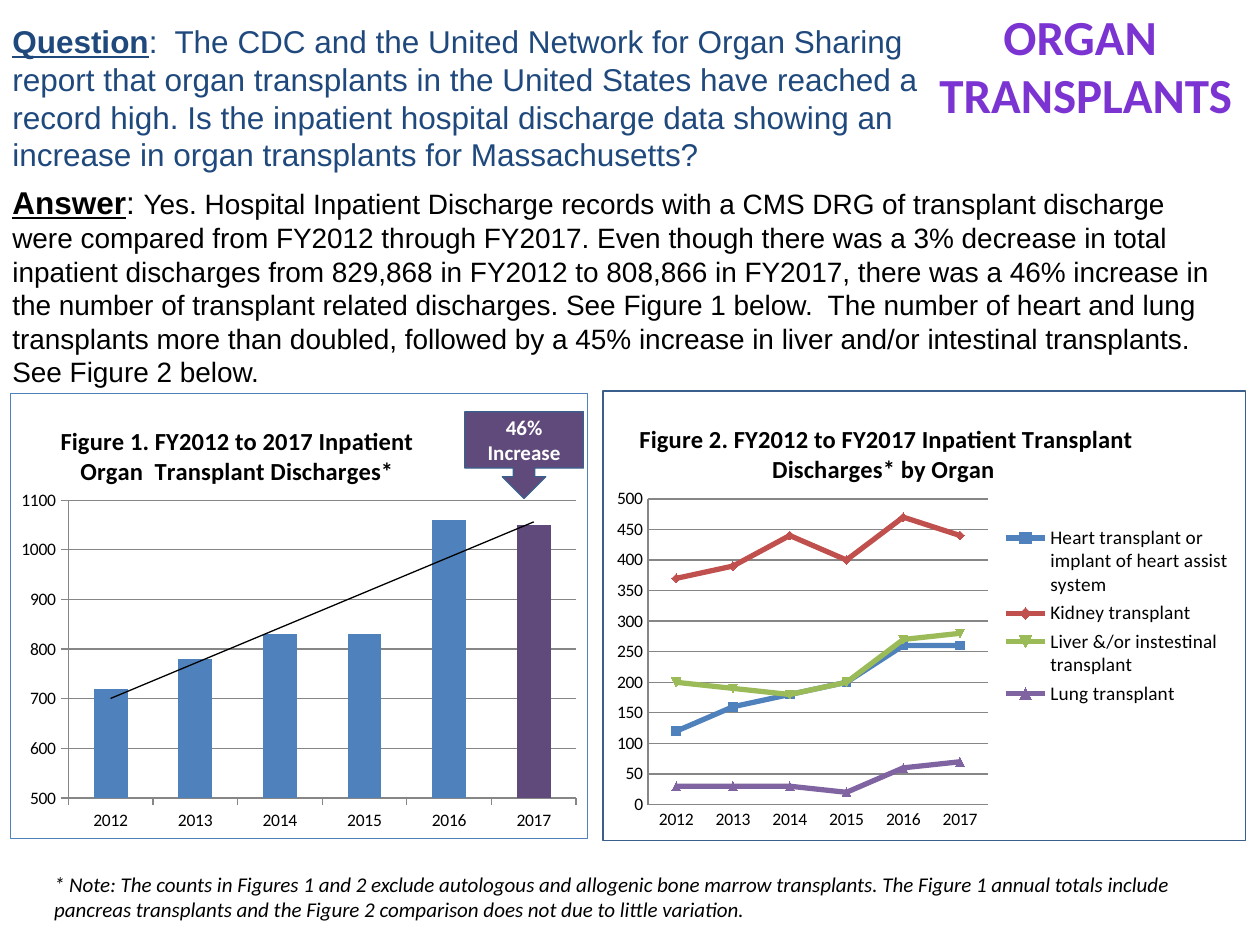
from dataclasses import dataclass
from typing import Optional

from lxml import etree
from pptx import Presentation
from pptx.chart.data import CategoryChartData
from pptx.dml.color import RGBColor
from pptx.enum.chart import XL_CHART_TYPE, XL_LEGEND_POSITION, XL_TICK_MARK
from pptx.enum.shapes import MSO_SHAPE
from pptx.enum.text import MSO_ANCHOR, PP_ALIGN
from pptx.oxml import parse_xml
from pptx.oxml.ns import nsdecls, qn
from pptx.util import Cm, Pt

COLUMN, LINE = XL_CHART_TYPE.COLUMN_CLUSTERED, XL_CHART_TYPE.LINE
LEGEND_RIGHT = XL_LEGEND_POSITION.RIGHT
TICK_NONE, TICK_OUT = XL_TICK_MARK.NONE, XL_TICK_MARK.OUTSIDE
CALLOUT = MSO_SHAPE.DOWN_ARROW_CALLOUT
TOP, MIDDLE = MSO_ANCHOR.TOP, MSO_ANCHOR.MIDDLE
LEFT, CENTER = PP_ALIGN.LEFT, PP_ALIGN.CENTER

COLORS = {
    "black": "000000", "white": "FFFFFF", "navy": "1F497D", "violet": "7B34D2",
    "plum": "604A7B", "outline": "3A5F8C", "grid": "868686",
    "blue": "4F81BD", "red": "C0504D", "green": "9BBB59", "purple": "8064A2",
}
YEARS = ["2012", "2013", "2014", "2015", "2016", "2017"]


@dataclass
class Span:
    text: str
    size: int
    color: str = "black"
    font: str = "Calibri"
    bold: bool = False
    italic: bool = False
    underline: bool = False


@dataclass
class TextBlock:
    place: tuple[float, float, float, float]
    paragraphs: list[list[Span]]
    align: PP_ALIGN = LEFT
    anchor: MSO_ANCHOR = TOP
    wrap: bool = True


@dataclass
class Series:
    name: str
    values: list[int]
    color: str


@dataclass
class Figure:
    place: tuple[float, float, float, float]
    kind: XL_CHART_TYPE
    title: str
    title_spot: tuple[float, float]
    plot: tuple[float, float, float, float]
    series: list[Series]
    scale: tuple[int, int, int]
    tick: XL_TICK_MARK
    border: str
    legend: Optional[tuple[float, float, float, float]] = None


def rgb(name: str) -> RGBColor:
    return RGBColor.from_string(COLORS[name])


def write(frame, block: TextBlock) -> None:
    frame.word_wrap = block.wrap
    frame.vertical_anchor = block.anchor
    for index, spans in enumerate(block.paragraphs):
        para = frame.add_paragraph() if index else frame.paragraphs[0]
        para.alignment = block.align
        for span in spans:
            run = para.add_run()
            run.text = span.text
            font = run.font
            font.name, font.size = span.font, Pt(span.size)
            font.bold, font.italic, font.underline = span.bold, span.italic, span.underline
            font.color.rgb = rgb(span.color)


def add_text(page, block: TextBlock) -> None:
    box = page.shapes.add_textbox(*map(Cm, block.place))
    write(box.text_frame, block)


def add_callout(page, block: TextBlock) -> None:
    callout = page.shapes.add_shape(CALLOUT, *map(Cm, block.place))
    callout.shadow.inherit = False
    callout.fill.solid()
    callout.fill.fore_color.rgb = rgb("plum")
    callout.line.color.rgb = rgb("outline")
    callout.line.width = Pt(0.75)
    write(callout.text_frame, block)


def set_layout(parent, after: str, spot: tuple[float, ...], inner: bool = False) -> None:
    for old in parent.findall(qn("c:layout")):
        parent.remove(old)
    layout = etree.Element(qn("c:layout"))
    manual = etree.SubElement(layout, qn("c:manualLayout"))
    settings = [("layoutTarget", "inner")] if inner else []
    settings += [("xMode", "edge"), ("yMode", "edge")]
    settings += list(zip("xywh", map(str, spot)))
    for tag, value in settings:
        etree.SubElement(manual, qn(f"c:{tag}")).set("val", value)
    anchor = parent.find(qn(after)) if after else None
    if anchor is None:
        parent.insert(0, layout)
    else:
        anchor.addnext(layout)


def line_xml(color: str) -> str:
    return f'<a:ln w="9525"><a:solidFill><a:srgbClr val="{COLORS[color]}"/></a:solidFill></a:ln>'


def add_trend(series) -> None:
    trend = parse_xml(
        f'<c:trendline {nsdecls("c", "a")}><c:spPr>{line_xml("black")}</c:spPr>'
        '<c:trendlineType val="linear"/><c:dispRSqr val="0"/><c:dispEq val="0"/></c:trendline>'
    )
    series._element.find(qn("c:cat")).addprevious(trend)


def style_axes(chart, figure: Figure) -> None:
    for axis in (chart.category_axis, chart.value_axis):
        axis.major_tick_mark = figure.tick
        axis.minor_tick_mark = TICK_NONE
        axis.tick_labels.font.size = Pt(10)
        axis.format.line.color.rgb = rgb("grid")
    axis = chart.value_axis
    axis.minimum_scale, axis.maximum_scale, axis.major_unit = figure.scale
    axis.has_major_gridlines = True
    axis.major_gridlines.format.line.color.rgb = rgb("grid")


def add_figure(page, figure: Figure) -> None:
    data = CategoryChartData()
    data.categories = YEARS
    for item in figure.series:
        data.add_series(item.name, item.values)
    chart = page.shapes.add_chart(figure.kind, *map(Cm, figure.place), data).chart
    chart.font.name, chart.font.size = "Calibri", Pt(18)
    chart.font.color.rgb = rgb("black")
    chart.has_title = True
    frame = chart.chart_title.text_frame
    frame.text = figure.title
    for para in frame.paragraphs:
        para.font.size, para.font.bold = Pt(14), True
    set_layout(chart.chart_title._element, "c:tx", figure.title_spot)
    style_axes(chart, figure)
    set_layout(chart._chartSpace.chart.plotArea, "", figure.plot, inner=True)
    plot = chart.plots[0]
    plot.vary_by_categories = False
    for series, item in zip(plot.series, figure.series):
        if figure.kind == LINE:
            series.smooth = False
            series.marker.style = None
            series.format.line.color.rgb = rgb(item.color)
            series.format.line.width = Pt(3)
        else:
            plot.gap_width = 150
            series.format.fill.solid()
            series.format.fill.fore_color.rgb = rgb(item.color)
            latest = series.points[len(YEARS) - 1].format.fill
            latest.solid()
            latest.fore_color.rgb = rgb("plum")
            add_trend(series)
    chart.has_legend = figure.legend is not None
    if figure.legend:
        chart.legend.position = LEGEND_RIGHT
        chart.legend.include_in_layout = False
        chart.legend.font.size = Pt(11)
        set_layout(chart.legend._element, "c:legendPos", figure.legend)
    frame_style = parse_xml(f'<c:spPr {nsdecls("c", "a")}>{line_xml(figure.border)}</c:spPr>')
    chart._chartSpace.find(qn("c:txPr")).addprevious(frame_style)


QUESTION = TextBlock((0, 1.32, 18.92, 1.3), [[
    Span("Question", 18, "navy", "Arial", bold=True, underline=True),
    Span(":  The CDC and the United Network for Organ Sharing report that organ transplants in the United States have reached a record high. Is the inpatient hospital discharge data showing an increase in organ transplants for Massachusetts?", 18, "navy", "Arial"),
]], anchor=MIDDLE)
HEADING = TextBlock((18.42, 0, 6.71, 2.64), [
    [Span(text, 28, "violet", bold=True)] for text in ("ORGAN", " TRANSPLANTS")
], align=CENTER, wrap=False)
ANSWER = TextBlock((0, 3.56, 24.82, 4.45), [[
    Span("Answer", 18, font="Arial", bold=True, underline=True),
    Span(": ", 18, font="Arial"),
    Span("Yes. Hospital Inpatient Discharge records with a CMS DRG of transplant discharge were compared from FY2012 through FY2017. Even though there was a 3% decrease in total inpatient discharges from 829,868 in FY2012 to 808,866 in FY2017, there was a 46% increase in the number of transplant related discharges. See Figure 1 below.  The number of heart and lung transplants more than doubled, followed by a 45% increase in liver and/or intestinal transplants. See Figure 2 below.", 16, font="Arial"),
]])
NOTE = TextBlock((0.84, 17.45, 23.67, 1.27), [[
    Span("* Note: The counts in Figures 1 and 2 exclude autologous and allogenic bone marrow transplants. The Figure 1 annual totals include pancreas transplants and the Figure 2 comparison does not due to little variation.", 12, italic=True),
]])
INCREASE = TextBlock((9.37, 8.3, 2.39, 1.75), [[Span("46% Increase", 12, "white", bold=True)]], CENTER, MIDDLE)
BY_ORGAN = Figure(
    (12.14, 7.87, 12.98, 9.09), LINE,
    "Figure 2. FY2012 to FY2017 Inpatient Transplant Discharges* by Organ ",
    (0.05, 0.06), (0.07, 0.24, 0.53, 0.68), [
        Series("Heart transplant or implant of heart assist system", [120, 160, 180, 200, 260, 260], "blue"),
        Series("Kidney transplant", [370, 390, 440, 400, 470, 440], "red"),
        Series("Liver &/or instestinal transplant", [200, 190, 180, 200, 270, 280], "green"),
        Series("Lung transplant", [30, 30, 30, 20, 60, 70], "purple"),
    ], (0, 500, 50), TICK_NONE, "outline", (0.62, 0.29, 0.36, 0.42))
TOTALS = Figure(
    (0.2, 7.92, 11.66, 8.99), COLUMN,
    "Figure 1. FY2012 to 2017 Inpatient \nOrgan  Transplant Discharges* ",
    (0.08, 0.06), (0.1, 0.24, 0.88, 0.67),
    [Series("Series 1", [720, 780, 830, 830, 1060, 1050], "blue")],
    (500, 1100, 100), TICK_OUT, "blue")


def main() -> None:
    deck = Presentation()
    deck.slide_width, deck.slide_height = Cm(25.4), Cm(19.05)
    page = deck.slides.add_slide(deck.slide_layouts[6])
    add_text(page, QUESTION)
    for figure in (BY_ORGAN, TOTALS):
        add_figure(page, figure)
    add_callout(page, INCREASE)
    for block in (HEADING, ANSWER, NOTE):
        add_text(page, block)
    deck.save("out.pptx")


if __name__ == "__main__":
    main()
